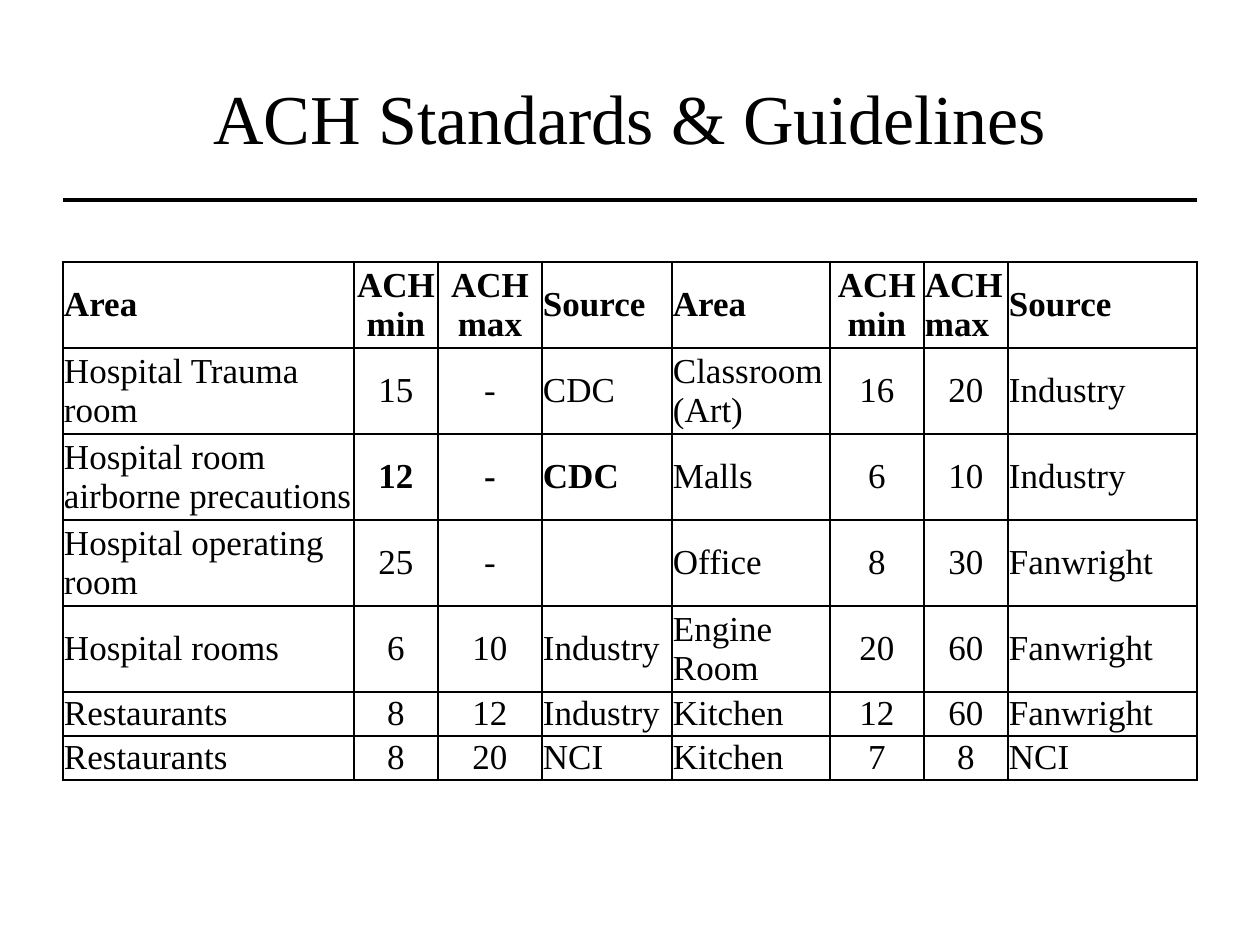
from lxml import etree
from pptx import Presentation
from pptx.dml.color import RGBColor
from pptx.enum.shapes import MSO_CONNECTOR
from pptx.enum.text import MSO_ANCHOR, PP_ALIGN
from pptx.oxml.ns import qn
from pptx.util import Pt

PX = 914400 / 126
STRAIGHT = MSO_CONNECTOR.STRAIGHT
MIDDLE = MSO_ANCHOR.MIDDLE
LEFT, CENTER = PP_ALIGN.LEFT, PP_ALIGN.CENTER
COLORS = {"ink": "000000", "paper": "FFFFFF"}
INK = RGBColor.from_string(COLORS["ink"])

COLUMN_WIDTHS = [291, 84, 104, 130, 158, 94, 84, 189]
ROW_HEIGHTS = [86] * 5 + [44] * 2
CENTERED_COLUMNS = {1, 2, 5, 6}
LEFT_HEADERS = {(0, 6)}
BOLD_CELLS = {(0, column) for column in range(8)} | {(2, 1), (2, 2), (2, 3)}
ROWS = [
    ["Area", "ACH\nmin", "ACH\nmax", "Source", "Area", "ACH\nmin", "ACH\nmax", "Source"],
    ["Hospital Trauma room", "15", "-", "CDC", "Classroom (Art)", "16", "20", "Industry"],
    ["Hospital room airborne precautions", "12", "-", "CDC", "Malls", "6", "10", "Industry"],
    ["Hospital operating room", "25", "-", "", "Office", "8", "30", "Fanwright"],
    ["Hospital rooms", "6", "10", "Industry", "Engine Room", "20", "60", "Fanwright"],
    ["Restaurants", "8", "12", "Industry", "Kitchen", "12", "60", "Fanwright"],
    ["Restaurants", "8", "20", "NCI", "Kitchen", "7", "8", "NCI"],
]


def px(*lengths):
    """Turn pixel lengths into a list of EMU."""
    return [round(length * PX) for length in lengths]


def write(para, text, align, size, bold=False):
    para.text = text
    para.alignment = align
    for span in para.runs:
        for name, value in {"name": "Times New Roman", "size": Pt(size), "bold": bold}.items():
            setattr(span.font, name, value)
        span.font.color.rgb = INK


deck = Presentation()
deck.slide_width, deck.slide_height = px(1260, 945)
page = deck.slides.add_slide(deck.slide_layouts[5])
page.background.fill.solid()
page.background.fill.fore_color.rgb = RGBColor.from_string(COLORS["paper"])

# Title and the rule below it
title = page.shapes.title
title.left, title.top, title.width, title.height = px(63, 38, 1134, 158)
title.text_frame.vertical_anchor = MIDDLE
write(title.text_frame.paragraphs[0], "ACH Standards & Guidelines", CENTER, 40)

rule = page.shapes.add_connector(STRAIGHT, *px(63, 200, 1197, 200))
rule.line.color.rgb = INK
rule.line.width = Pt(2)
etree.SubElement(rule._element.spPr, qn("a:effectLst"))

# Table of air changes per hour
frame = page.shapes.add_table(
    len(ROWS), len(COLUMN_WIDTHS), *px(63, 262, sum(COLUMN_WIDTHS), sum(ROW_HEIGHTS)))
table = frame.table
table.first_row = table.horz_banding = False
for column, width in zip(table.columns, px(*COLUMN_WIDTHS)):
    column.width = width
for row, height in zip(table.rows, px(*ROW_HEIGHTS)):
    row.height = height

for row_index, row in enumerate(ROWS):
    for column_index, text in enumerate(row):
        place = (row_index, column_index)
        cell = table.cell(*place)
        cell.vertical_anchor = MIDDLE
        for side in ("left", "right", "top", "bottom"):
            setattr(cell, f"margin_{side}", px(1)[0])
        properties = cell._tc.get_or_add_tcPr()
        for edge in ("lnL", "lnR", "lnT", "lnB"):
            border = etree.SubElement(properties, qn(f"a:{edge}"), w=str(Pt(1)))
            fill = etree.SubElement(border, qn("a:solidFill"))
            etree.SubElement(fill, qn("a:srgbClr"), val=COLORS["ink"])
        cell.fill.background()
        centered = column_index in CENTERED_COLUMNS and place not in LEFT_HEADERS
        write(cell.text_frame.paragraphs[0], text, CENTER if centered else LEFT, 20,
              place in BOLD_CELLS)

deck.save("out.pptx")
